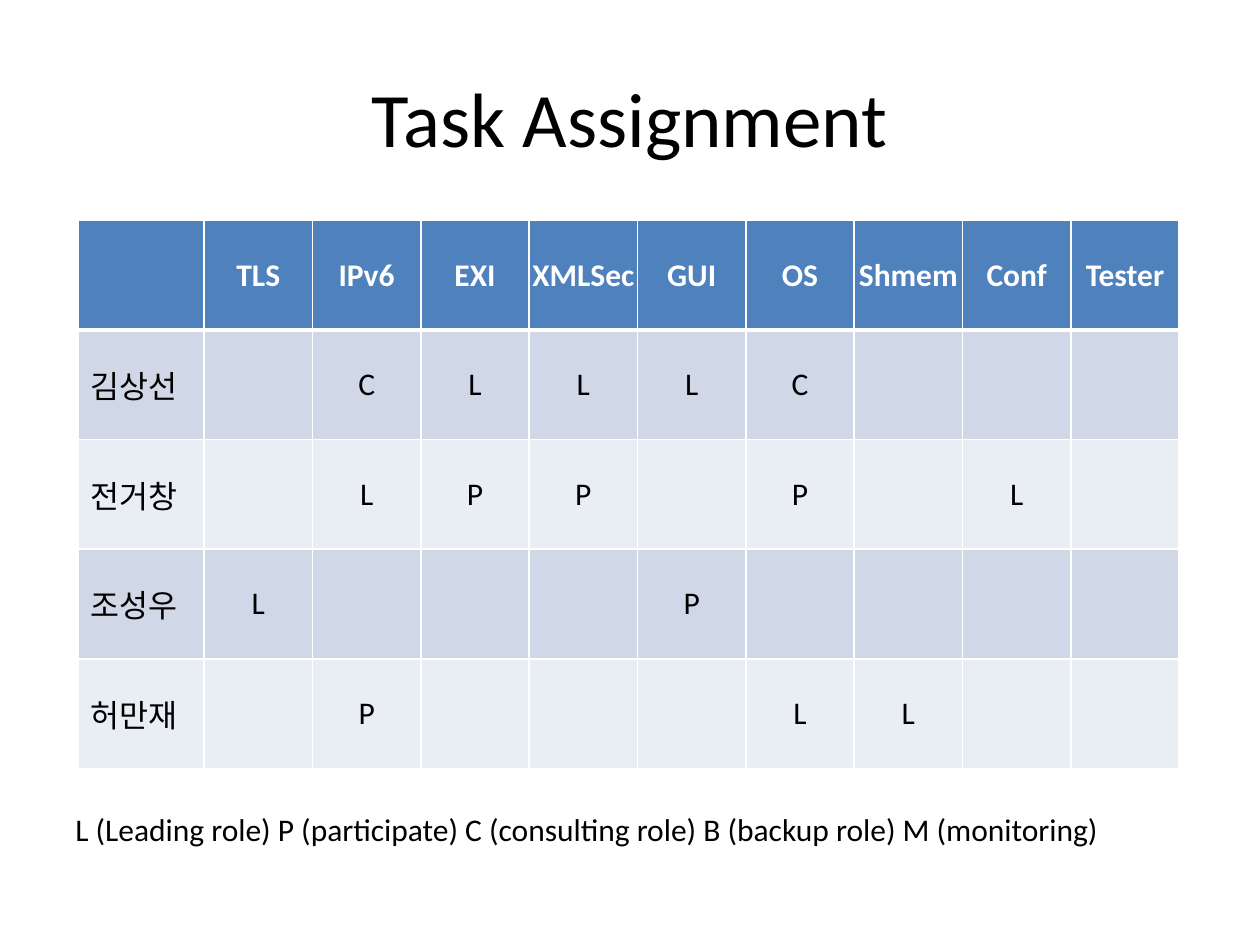
from lxml.etree import SubElement
from pptx import Presentation
from pptx.dml.color import RGBColor
from pptx.enum.text import MSO_ANCHOR, PP_ALIGN
from pptx.oxml.ns import qn
from pptx.util import Inches, Pt

TITLE = "Task Assignment"
LEGEND = "L (Leading role) P (participate) C (consulting role) B (backup role) M (monitoring)"
TASKS = ["TLS", "IPv6", "EXI", "XMLSec", "GUI", "OS", "Shmem", "Conf", "Tester"]
ROLES = {
    "김상선": {"IPv6": "C", "EXI": "L", "XMLSec": "L", "GUI": "L", "OS": "C"},
    "전거창": {"IPv6": "L", "EXI": "P", "XMLSec": "P", "OS": "P", "Conf": "L"},
    "조성우": {"TLS": "L", "GUI": "P"},
    "허만재": {"IPv6": "P", "OS": "L", "Shmem": "L"},
}
COLORS = {
    "text": "000000",
    "white": "FFFFFF",
    "header": "4F81BD",
    "odd_row": "D0D8E8",
    "even_row": "E9EDF4",
}
FONT = "Calibri"
NAME_WIDTH, TASK_WIDTH, ROW_HEIGHT = 1, 0.86, 0.87


def write_text(frame, text, size=18, color="text", bold=False, align=PP_ALIGN.LEFT):
    paragraph = frame.paragraphs[0]
    paragraph.alignment = align
    run = paragraph.add_run()
    run.text = text
    run.font.name = FONT
    run.font.size = Pt(size)
    run.font.bold = bold
    run.font.color.rgb = RGBColor.from_string(COLORS[color])


def add_text_box(slide, text, left, top, width, height, anchor=MSO_ANCHOR.TOP, **text_format):
    frame = slide.shapes.add_textbox(
        Inches(left), Inches(top), Inches(width), Inches(height)
    ).text_frame
    frame.word_wrap = True
    frame.vertical_anchor = anchor
    write_text(frame, text, **text_format)


def set_borders(cell, **widths):
    properties = cell._tc.get_or_add_tcPr()
    for index, side in enumerate(("lnL", "lnR", "lnT", "lnB")):
        line = properties.makeelement(qn(f"a:{side}"), {"w": str(Pt(widths.get(side, 1)))})
        fill = SubElement(line, qn("a:solidFill"))
        SubElement(fill, qn("a:srgbClr"), val=COLORS["white"])
        properties.insert(index, line)


def add_role_table(slide):
    rows = [["", *TASKS]]
    rows += [[name, *(roles.get(task, "") for task in TASKS)] for name, roles in ROLES.items()]
    width = NAME_WIDTH + TASK_WIDTH * len(TASKS)
    table = slide.shapes.add_table(
        len(rows), len(rows[0]),
        Inches(0.62), Inches(1.75), Inches(width), Inches(ROW_HEIGHT * len(rows)),
    ).table
    for index, column in enumerate(table.columns):
        column.width = Inches(TASK_WIDTH if index else NAME_WIDTH)

    for row_index, values in enumerate(rows):
        is_header = row_index == 0
        table.rows[row_index].height = Inches(ROW_HEIGHT)
        fill = "header" if is_header else "odd_row" if row_index % 2 else "even_row"
        for column_index, value in enumerate(values):
            cell = table.cell(row_index, column_index)
            cell.fill.solid()
            cell.fill.fore_color.rgb = RGBColor.from_string(COLORS[fill])
            cell.vertical_anchor = MSO_ANCHOR.MIDDLE
            if is_header:
                cell.margin_left = cell.margin_right = 0
            set_borders(cell, lnT=3 if row_index == 1 else 1, lnB=3 if is_header else 1)
            if value:
                write_text(
                    cell.text_frame, value,
                    color="white" if is_header else "text",
                    bold=is_header,
                    align=PP_ALIGN.CENTER if column_index else PP_ALIGN.LEFT,
                )


def main():
    presentation = Presentation()
    presentation.slide_width, presentation.slide_height = Inches(10), Inches(7.5)
    slide = presentation.slides.add_slide(presentation.slide_layouts[6])
    add_text_box(
        slide, TITLE, 0.5, 0.3, 9, 1.25,
        anchor=MSO_ANCHOR.MIDDLE, size=44, align=PP_ALIGN.CENTER,
    )
    add_role_table(slide)
    add_text_box(slide, LEGEND, 0.5, 6.38, 9, 0.4)
    presentation.save("out.pptx")


if __name__ == "__main__":
    main()
